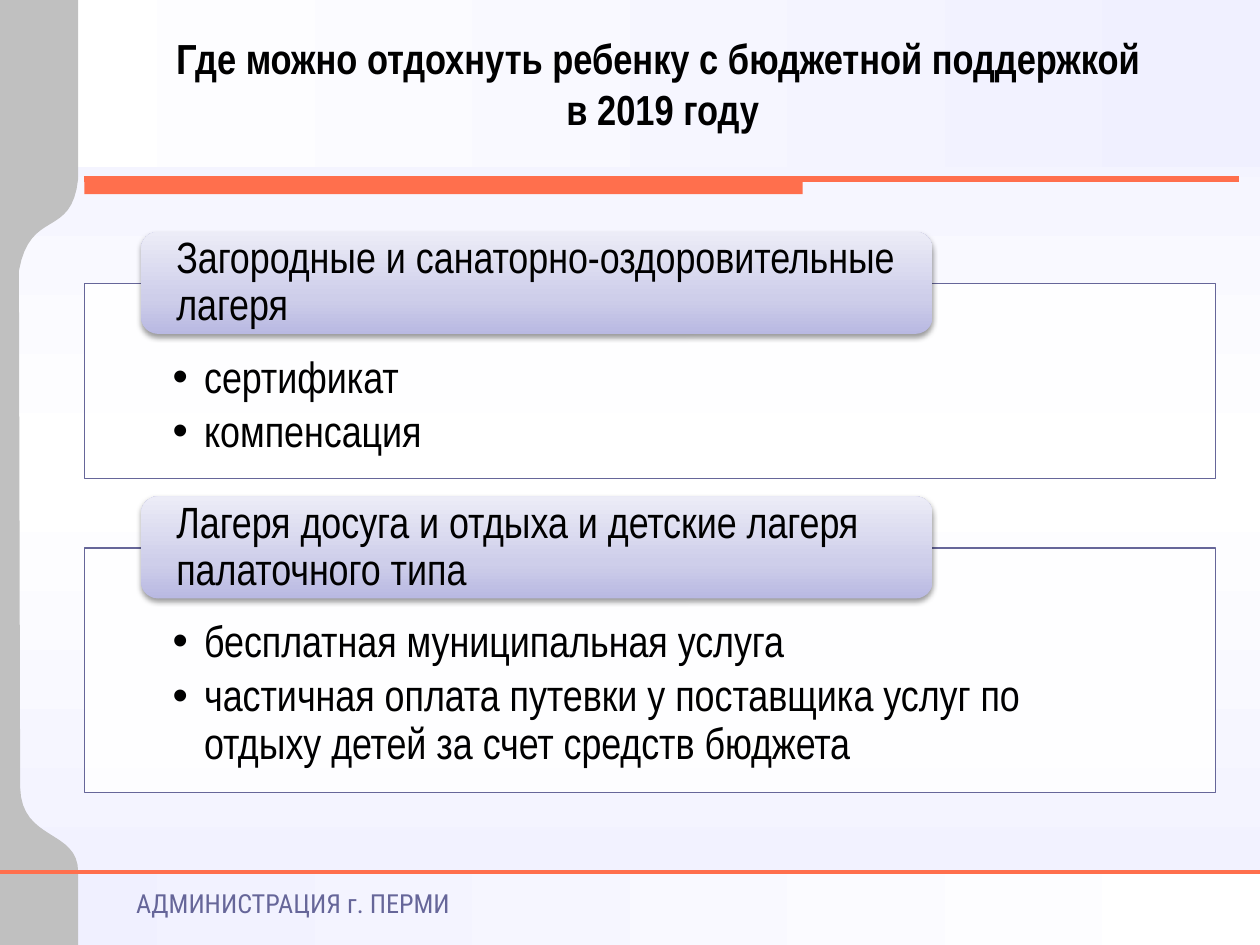
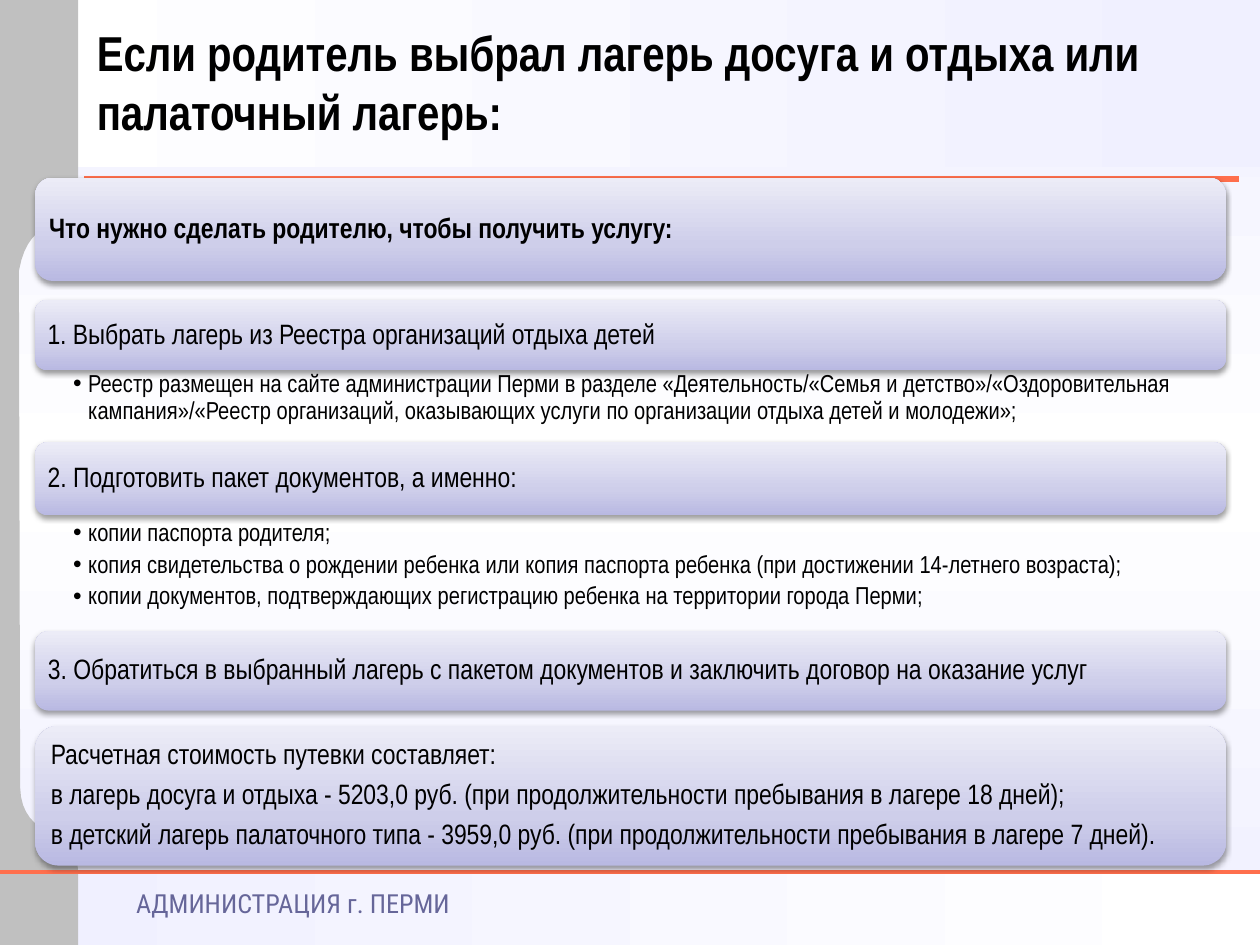
"""Build two slides on budget-supported children's holidays in Perm."""
import pptx
import pptx.dml.color
import pptx.enum.shapes
import pptx.enum.text
import pptx.oxml.ns
import pptx.util
from lxml import etree

Inches = pptx.util.Inches
Pt = pptx.util.Pt
RGBColor = pptx.dml.color.RGBColor
Shape = pptx.enum.shapes.MSO_SHAPE
Align = pptx.enum.text.PP_ALIGN
Anchor = pptx.enum.text.MSO_ANCHOR
qn = pptx.oxml.ns.qn

BLACK = RGBColor(0x00, 0x00, 0x00)
WHITE = RGBColor(0xFF, 0xFF, 0xFF)
LAVENDER = RGBColor(0xF0, 0xF0, 0xFF)
GRAY = RGBColor(0xC0, 0xC0, 0xC0)
CORAL = RGBColor(0xFF, 0x6F, 0x4D)
SLATE = RGBColor(0x66, 0x66, 0x99)
PILL_DARK = RGBColor(0xB9, 0xB9, 0xE2)
PILL_MIDDLE = RGBColor(0xCE, 0xCE, 0xEA)
PILL_LIGHT = RGBColor(0xEC, 0xEC, 0xF7)

BODY_FONT = "Arial Narrow"
FOOTER_FONT = "Roboto Condensed"
SLIDE_WIDTH, SLIDE_HEIGHT = 10, 7.5
RULE_TOP = 1.42
FOOTER_TOP = 6.92
PILL_STOPS = [(0, PILL_DARK), (35, PILL_MIDDLE), (100, PILL_LIGHT)]


def add_element(parent, tag, **attributes):
    """Append a child element with the given attributes."""
    values = {name: str(value) for name, value in attributes.items()}
    return etree.SubElement(parent, qn(tag), values)


def fill_gradient(fill, element, stops, angle):
    """Give a fill percentage colour stops and a clockwise angle."""
    fill.gradient()
    stop_list = element.xpath(".//a:gsLst")[0]
    for stop in list(stop_list):
        stop_list.remove(stop)
    for percent, color in stops:
        stop = add_element(stop_list, "a:gs", pos=percent * 1000)
        add_element(stop, "a:srgbClr", val=color)
    element.xpath(".//a:lin")[0].set("ang", str(angle * 60000))


def add_plain_shape(page, kind, left, top, width, height):
    """Add a preset shape without outline or shadow."""
    shape = page.shapes.add_shape(
        kind, Inches(left), Inches(top), Inches(width), Inches(height))
    shape.shadow.inherit = False
    shape.line.fill.background()
    return shape


def add_band(page, top, height, start, end):
    """Add a full-width band shaded from left to right."""
    band = add_plain_shape(page, Shape.RECTANGLE, 0, top, SLIDE_WIDTH, height)
    fill_gradient(band.fill, band._element, [(0, start), (100, end)], 0)


def add_rule(page, left, right, top, weight):
    """Add a horizontal coral line."""
    rule = page.shapes.add_connector(
        pptx.enum.shapes.MSO_CONNECTOR.STRAIGHT,
        Inches(left), Inches(top), Inches(right), Inches(top))
    rule.line.color.rgb = CORAL
    rule.line.width = Pt(weight)
    add_element(rule._element.spPr, "a:effectLst")


def curve_points(start, first, second, end, steps=16):
    """Return points along a cubic curve, leaving out its start."""
    points = []
    for step in range(1, steps + 1):
        t = step / steps
        weights = ((1 - t) ** 3, 3 * t * (1 - t) ** 2,
                   3 * t ** 2 * (1 - t), t ** 3)
        points.append(tuple(
            sum(weight * value for weight, value in zip(weights, values))
            for values in zip(start, first, second, end)))
    return points


def add_side_strip(page):
    """Add the grey strip with its curved notch on the left."""
    notch_bottom, notch_top = (0.16, 6.25), (0.15, 2.15)
    points = [(0.62, 0), (0, 0), (0, SLIDE_HEIGHT),
              (0.62, SLIDE_HEIGHT), (0.62, FOOTER_TOP)]
    points += curve_points(points[-1], (0.62, 6.58), (0.17, 6.68), notch_bottom)
    points.append(notch_top)
    points += curve_points(notch_top, (0.24, 1.65), (0.57, 1.9), (0.62, RULE_TOP))
    builder = page.shapes.build_freeform(
        Inches(0.62), Inches(RULE_TOP), scale=1.0)
    builder.add_line_segments([(Inches(x), Inches(y)) for x, y in points])
    strip = builder.convert_to_shape()
    strip.shadow.inherit = False
    strip.fill.solid()
    strip.fill.fore_color.rgb = GRAY
    strip.line.fill.background()


def write(box, lines, size, font=BODY_FONT, color=BLACK, bold=False,
          insets=(0.1, 0.05, 0.1, 0.05), align=Align.LEFT, anchor=Anchor.TOP,
          wrap=True, spacing=1.0, after=0, hanging=0):
    """Write paragraphs into a shape, bulleted when hanging is set."""
    frame = box.text_frame
    frame.word_wrap = wrap
    frame.vertical_anchor = anchor
    (frame.margin_left, frame.margin_top,
     frame.margin_right, frame.margin_bottom) = map(Inches, insets)
    for index, line in enumerate(lines):
        para = frame.add_paragraph() if index else frame.paragraphs[0]
        para.add_run().text = line
        para.alignment = align
        para.line_spacing = spacing
        para.space_after = Pt(after)
        if hanging:
            properties = para._p.get_or_add_pPr()
            properties.set("marL", str(Inches(hanging)))
            properties.set("indent", str(-Inches(hanging)))
            add_element(properties, "a:buFont", typeface="Arial")
            add_element(properties, "a:buChar", char="•")
        para.font.name = font
        para.font.size = Pt(size)
        para.font.bold = bold
        para.font.color.rgb = color


def add_text(page, left, top, width, height, lines, size, **style):
    """Add a text box."""
    box = page.shapes.add_textbox(
        Inches(left), Inches(top), Inches(width), Inches(height))
    write(box, lines, size, **style)


def add_pill(page, left, top, width, height, lines, size, after, insets,
             bold=False):
    """Add a shaded rounded heading with a soft shadow."""
    pill = add_plain_shape(
        page, Shape.ROUNDED_RECTANGLE, left, top, width, height)
    fill_gradient(pill.fill, pill._element, PILL_STOPS, 270)
    effects = pill._element.spPr.find(qn("a:effectLst"))
    shadow = add_element(effects, "a:outerShdw", blurRad=Pt(3.1), dist=Pt(1.6),
                         dir=90 * 60000, rotWithShape=0)
    shade = add_element(shadow, "a:srgbClr", val=BLACK)
    add_element(shade, "a:alpha", val=38000)
    write(pill, lines, size, bold=bold, insets=insets, anchor=Anchor.MIDDLE,
          spacing=0.9, after=after)


def add_camp_panel(page, top, height, heading, options):
    """Add an outlined list with a heading pill over its top edge."""
    panel = add_plain_shape(page, Shape.RECTANGLE, 0.67, top, 8.98, height)
    panel.fill.solid()
    panel.fill.fore_color.rgb = WHITE
    add_element(panel._element.xpath("./p:spPr/a:solidFill/a:srgbClr")[0],
                "a:alpha", val=90000)
    panel.line.color.rgb = SLATE
    panel.line.width = Pt(0.75)
    write(panel, options, 25, insets=(0.7, 0.57, 0.7, 0.19),
          spacing=0.9, after=4, hanging=0.25)
    add_pill(page, 1.12, top - 0.41, 6.28, 0.81, [heading], 25, 8.75,
             (0.24, 0, 0.24, 0))


def add_step(page, top, height, lines, bold=False):
    """Add a full-width pill of the parent's guide."""
    add_pill(page, 0.28, top, 9.45, height, lines, 16, 5.6, (0.07,) * 4, bold)


def add_step_details(page, top, height, lines):
    """Add the bulleted details under a step."""
    add_text(page, 0.28, top, 9.45, height, lines, 14,
             insets=(0.3, 0.02, 0.11, 0.02), spacing=0.9, after=3, hanging=0.12)


def add_page(deck):
    """Add a slide with the shared background, bands, rules and footer."""
    page = deck.slides.add_slide(deck.slide_layouts[6])
    fill_gradient(page.background.fill, page._element,
                  [(0, LAVENDER), (50, WHITE), (100, LAVENDER)], 90)
    add_band(page, 0, 1.33, WHITE, LAVENDER)
    add_band(page, FOOTER_TOP, SLIDE_HEIGHT - FOOTER_TOP, LAVENDER, WHITE)
    add_side_strip(page)
    bar = add_plain_shape(page, Shape.RECTANGLE, 0.67, RULE_TOP, 5.7, 0.12)
    bar.fill.solid()
    bar.fill.fore_color.rgb = CORAL
    add_rule(page, 0.67, 9.83, RULE_TOP, 3)
    add_rule(page, 0, SLIDE_WIDTH, FOOTER_TOP, 2.25)
    add_text(page, 1.08, 6.99, 3.5, 0.35, ["АДМИНИСТРАЦИЯ г. ПЕРМИ"], 15,
             font=FOOTER_FONT, color=SLATE, insets=(0, 0.05, 0, 0.05))
    return page


def add_camps_page(deck):
    """Add the slide on kinds of camp and their support."""
    page = add_page(deck)
    add_text(page, 1.22, 0.21, 8.08, 0.91,
             ["Где можно отдохнуть ребенку с бюджетной поддержкой ",
              "в 2019 году"], 24, bold=True, align=Align.CENTER, wrap=False)
    add_camp_panel(page, 2.25, 1.55,
                   "Загородные и санаторно-оздоровительные лагеря",
                   ["сертификат", "компенсация"])
    add_camp_panel(page, 4.35, 1.94,
                   "Лагеря досуга и отдыха и детские лагеря палаточного типа",
                   ["бесплатная муниципальная услуга",
                    "частичная оплата путевки у поставщика услуг по отдыху "
                    "детей за счет средств бюджета"])


def add_steps_page(deck):
    """Add the slide on what a parent has to do."""
    page = add_page(deck)
    add_text(page, 0.67, 0.13, 9.13, 1.04,
             ["Если родитель выбрал лагерь досуга и отдыха или "
              "палаточный лагерь:"], 28, bold=True)
    add_step(page, 1.41, 0.82,
             ["Что нужно сделать родителю, чтобы получить услугу:"], bold=True)
    add_step(page, 2.38, 0.56,
             ["1. Выбрать лагерь из Реестра организаций отдыха детей"])
    add_step_details(page, 2.93, 0.85, [
        "Реестр размещен на сайте администрации Перми в разделе "
        "«Деятельность/«Семья и детство»/«Оздоровительная кампания»/«Реестр "
        "организаций, оказывающих услуги по организации отдыха детей и "
        "молодежи»;"])
    add_step(page, 3.51, 0.58, ["2. Подготовить пакет документов, а именно:"])
    add_step_details(page, 4.11, 0.94, [
        "копии паспорта родителя;",
        "копия свидетельства о рождении ребенка или копия паспорта ребенка "
        "(при достижении 14-летнего возраста);",
        "копии документов, подтверждающих регистрацию ребенка на территории "
        "города Перми;"])
    add_step(page, 5.01, 0.63, [
        "3. Обратиться в выбранный лагерь с пакетом документов и заключить "
        "договор на оказание услуг"])
    add_step(page, 5.76, 1.11, [
        "Расчетная стоимость путевки составляет:",
        "в лагерь досуга и отдыха - 5203,0 руб. (при продолжительности "
        "пребывания в лагере 18 дней);",
        "в детский лагерь палаточного типа - 3959,0 руб. (при "
        "продолжительности пребывания в лагере 7 дней)."])


def main():
    """Build and save the deck."""
    deck = pptx.Presentation()
    deck.slide_width = Inches(SLIDE_WIDTH)
    deck.slide_height = Inches(SLIDE_HEIGHT)
    add_camps_page(deck)
    add_steps_page(deck)
    deck.save("out.pptx")


if __name__ == "__main__":
    main()
